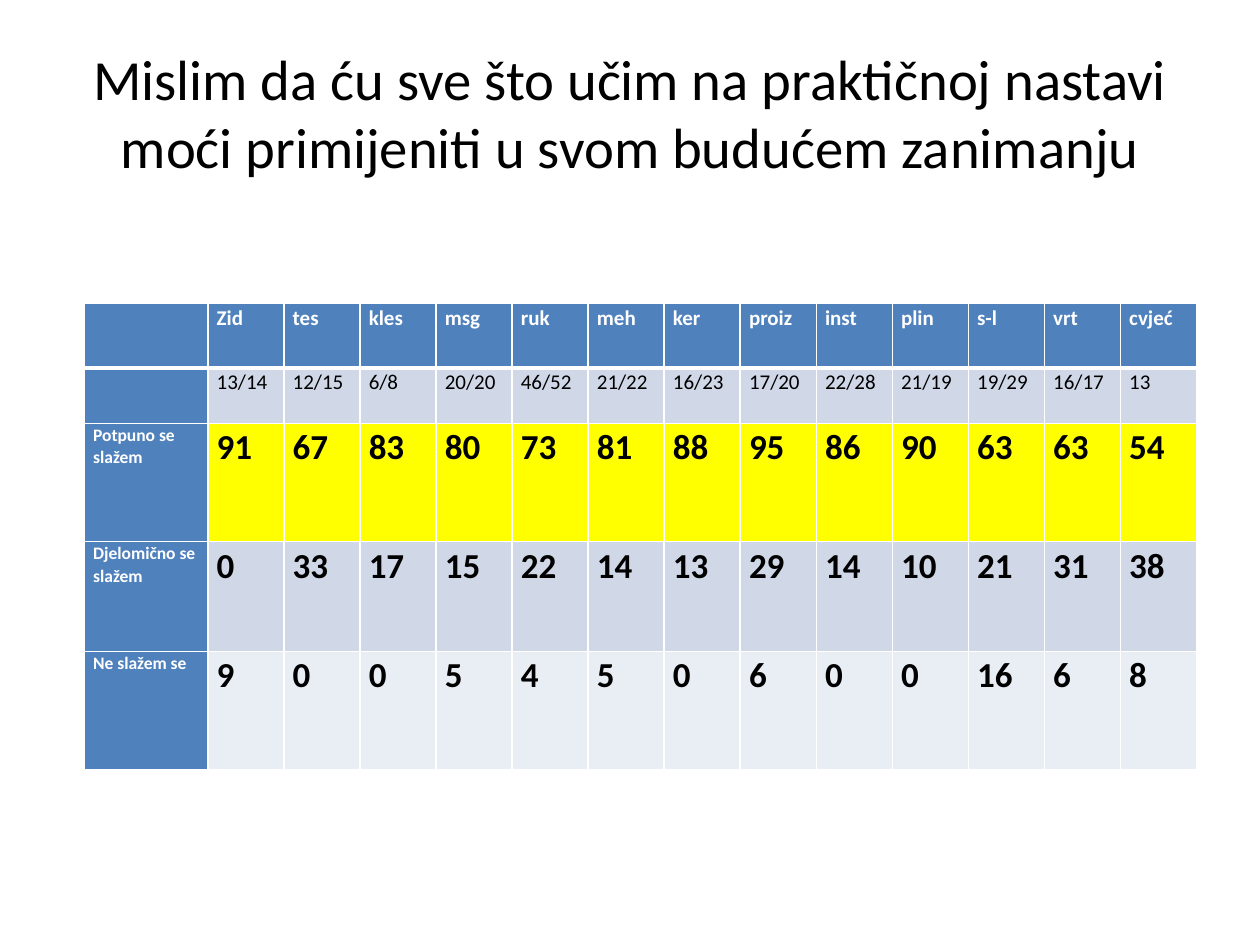
from lxml.etree import SubElement
from pptx import Presentation
from pptx.dml.color import RGBColor
from pptx.enum.text import MSO_ANCHOR, PP_ALIGN
from pptx.oxml.ns import qn
from pptx.util import Inches, Pt

COLORS = {
    "header": "4F81BD",
    "band": "D0D8E8",
    "light": "E9EDF4",
    "highlight": "FFFF00",
    "white": "FFFFFF",
    "black": "000000",
}
FONT = "Calibri"
TITLE = "Mislim da ću sve što učim na praktičnoj nastavi moći primijeniti u svom budućem zanimanju"
ROWS = [
    ("", "Zid tes kles msg ruk meh ker proiz inst plin s-l vrt cvjeć", "header", 12, True, 0.51),
    ("", "13/14 12/15 6/8 20/20 46/52 21/22 16/23 17/20 22/28 21/19 19/29 16/17 13", "band", 12, False, 0.44),
    ("Potpuno se slažem", "91 67 83 80 73 81 88 95 86 90 63 63 54", "highlight", 20, True, 0.94),
    ("Djelomično se slažem", "0 33 17 15 22 14 13 29 14 10 21 31 38", "band", 20, True, 0.87),
    ("Ne slažem se", "9 0 0 5 4 5 0 6 0 0 16 6 8", "light", 20, True, 0.94),
]
LABEL_WIDTH = 0.98


def rgb(name):
    return RGBColor.from_string(COLORS[name])


def add_run(paragraph, text, size, color, bold=False):
    run = paragraph.add_run()
    run.text = text
    run.font.name = FONT
    run.font.size = Pt(size)
    run.font.bold = bold
    run.font.color.rgb = rgb(color)


def set_borders(cell, top, bottom):
    properties = cell._tc.get_or_add_tcPr()
    widths = {"a:lnL": 1, "a:lnR": 1, "a:lnT": top, "a:lnB": bottom}
    for position, (tag, width) in enumerate(widths.items()):
        border = SubElement(properties, qn(tag), w=str(Pt(width)))
        fill = SubElement(border, qn("a:solidFill"))
        SubElement(fill, qn("a:srgbClr"), val=COLORS["white"])
        properties.insert(position, border)


def fill_cell(cell, text, fill, size, bold, top, bottom):
    cell.fill.solid()
    cell.fill.fore_color.rgb = rgb(fill)
    cell.margin_left = cell.margin_right = Inches(0.07)
    cell.margin_top = cell.margin_bottom = 0
    set_borders(cell, top, bottom)
    if text:
        paragraph = cell.text_frame.paragraphs[0]
        paragraph.line_spacing = 1.07
        add_run(paragraph, text, size, "white" if fill == "header" else "black", bold)


def add_title(slide, left, top, width, height):
    title = slide.shapes.add_textbox(Inches(left), Inches(top), Inches(width), Inches(height))
    frame = title.text_frame
    frame.word_wrap = True
    frame.vertical_anchor = MSO_ANCHOR.MIDDLE
    paragraph = frame.paragraphs[0]
    paragraph.alignment = PP_ALIGN.CENTER
    add_run(paragraph, TITLE, 32.4, "black")


def add_survey(slide, left, top, width, height):
    trades = len(ROWS[0][1].split())
    survey = slide.shapes.add_table(
        len(ROWS), trades + 1, Inches(left), Inches(top), Inches(width), Inches(height)
    ).table
    survey.columns[0].width = Inches(LABEL_WIDTH)
    for column in range(1, trades + 1):
        survey.columns[column].width = Inches((width - LABEL_WIDTH) / trades)
    for index, (label, values, fill, size, bold, row_height) in enumerate(ROWS):
        survey.rows[index].height = Inches(row_height)
        edges = 3 if index == 1 else 1, 3 if index == 0 else 1
        fill_cell(survey.cell(index, 0), label, "header", 10, True, *edges)
        for column, value in enumerate(values.split(), 1):
            fill_cell(survey.cell(index, column), value, fill, size, bold, *edges)


def main():
    presentation = Presentation()
    presentation.slide_width = Inches(10)
    presentation.slide_height = Inches(7.5)
    slide = presentation.slides.add_slide(presentation.slide_layouts[6])
    add_title(slide, 0.5, 0.3, 9, 1.17)
    add_survey(slide, 0.67, 2.41, 8.83, 3.7)
    presentation.save("out.pptx")


if __name__ == "__main__":
    main()
